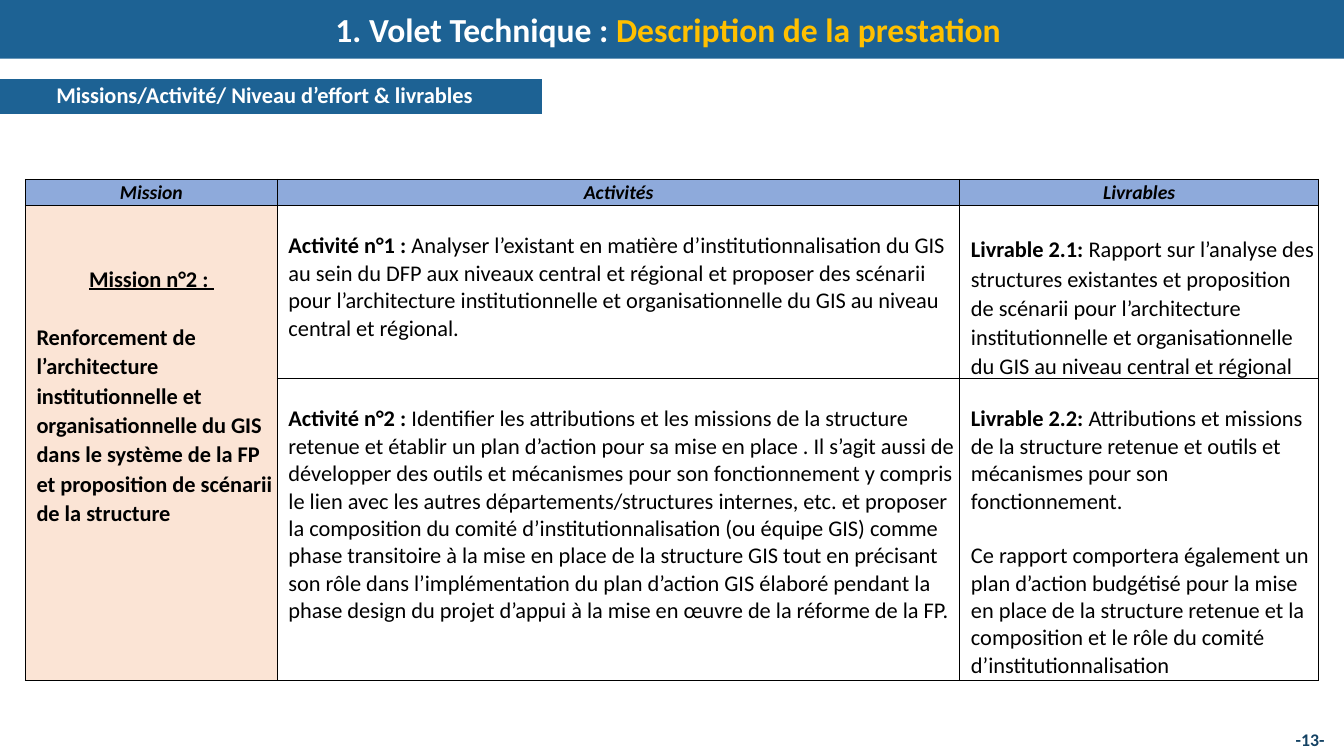
from lxml import etree
from pptx import Presentation
from pptx.dml.color import RGBColor
from pptx.enum.shapes import MSO_SHAPE
from pptx.enum.text import MSO_ANCHOR, PP_ALIGN
from pptx.oxml.ns import qn
from pptx.util import Cm, Pt

RECTANGLE, PARALLELOGRAM = MSO_SHAPE.RECTANGLE, MSO_SHAPE.PARALLELOGRAM
LEFT, CENTER, RIGHT = PP_ALIGN.LEFT, PP_ALIGN.CENTER, PP_ALIGN.RIGHT
MIDDLE = MSO_ANCHOR.MIDDLE

BLUE = RGBColor(0x1D, 0x62, 0x94)
NAVY = RGBColor(0x13, 0x41, 0x63)
GOLD = RGBColor(0xFF, 0xC0, 0x00)
PERIWINKLE = RGBColor(0x8E, 0xAA, 0xDB)
PEACH = RGBColor(0xFB, 0xE4, 0xD5)
WHITE = RGBColor(0xFF, 0xFF, 0xFF)
BLACK = RGBColor(0, 0, 0)

FONT = "Calibri"
SLIDE_WIDTH = 33.87
LINE = 0.69  # height in cm of one line of body text
WIDE = 1.07  # line spacing of the looser cells
COLUMN_WIDTHS = (6.35, 17.2, 9.04)
ROW_HEIGHTS = (0.65, 4.34, 7.62)
HEADERS = ("Mission", "Activités", "Livrables")

MISSION = (
    "Renforcement de l’architecture institutionnelle et organisationnelle du GIS "
    "dans le système de la FP et proposition de scénarii de la structure"
)
ACTIVITY_1 = (
    "Analyser l’existant en matière d’institutionnalisation du GIS au sein du DFP "
    "aux niveaux central et régional et proposer des scénarii pour l’architecture "
    "institutionnelle et organisationnelle du GIS au niveau central et régional."
)
ACTIVITY_2 = (
    "Identifier les attributions et les missions de la structure retenue et établir "
    "un plan d’action pour sa mise en place . Il s’agit aussi de développer des "
    "outils et mécanismes pour son fonctionnement y compris le lien avec les autres "
    "départements/structures internes, etc. et proposer la composition du comité "
    "d’institutionnalisation (ou équipe GIS) comme phase transitoire à la mise en "
    "place de la structure GIS tout en précisant son rôle dans l’implémentation du "
    "plan d’action GIS élaboré pendant la phase design du projet d’appui à la mise "
    "en œuvre de la réforme de la FP."
)
DELIVERABLE_1 = (
    "Rapport sur l’analyse des structures existantes et proposition de scénarii pour "
    "l’architecture institutionnelle et organisationnelle du GIS au niveau central "
    "et régional"
)
DELIVERABLE_2 = (
    "Attributions et missions de la structure retenue et outils et mécanismes pour "
    "son fonctionnement."
)
DELIVERABLE_2_PLAN = (
    "Ce rapport comportera également un plan d’action budgétisé pour la mise en place "
    "de la structure retenue et la composition et le rôle du comité "
    "d’institutionnalisation"
)


def apply(target, formats):
    for name, value in formats.items():
        setattr(target, name, value)


def add_span(para, text, color=BLACK, size=16, **formats):
    span = para.add_run()
    span.text = text
    span.font.color.rgb = color
    apply(span.font, {"name": FONT, "size": Pt(size), **formats})


def set_indent(para, length):
    para._p.get_or_add_pPr().set("marL", str(Cm(length)))


def set_margins(target, side, top):
    apply(target, {"margin_left": Cm(side), "margin_right": Cm(side),
                   "margin_top": Cm(top), "margin_bottom": Cm(top)})


def add_band(page, shape_type, place, **para_formats):
    """Add a blue banner and return its paragraph."""
    band = page.shapes.add_shape(shape_type, *map(Cm, place))
    band.shadow.inherit = False
    band.fill.solid()
    band.fill.fore_color.rgb = BLUE
    band.line.fill.background()
    if shape_type == PARALLELOGRAM:
        band.adjustments[0] = 0
    frame = band.text_frame
    frame.word_wrap = True
    frame.vertical_anchor = MIDDLE
    set_margins(frame, 0.28, 0.15)
    apply(frame.paragraphs[0], para_formats)
    return frame.paragraphs[0]


def add_page_number(page, text):
    box = page.shapes.add_textbox(Cm(25.58), Cm(18.36), Cm(7.8), Cm(0.53))
    set_margins(box.text_frame, 0, 0)
    box.text_frame.word_wrap = True
    para = box.text_frame.paragraphs[0]
    para.alignment = RIGHT
    add_span(para, text, NAVY, 12.7, bold=True)


def set_borders(cell):
    properties = cell._tc.get_or_add_tcPr()
    for position, side in enumerate(("a:lnL", "a:lnR", "a:lnT", "a:lnB")):
        line = etree.Element(qn(side), w=str(Pt(1)))
        fill = etree.SubElement(line, qn("a:solidFill"))
        etree.SubElement(fill, qn("a:srgbClr"), val=str(BLACK))
        properties.insert(position, line)


def style_cell(cell, color=None):
    set_margins(cell, 0.05, 0)
    if color is None:
        cell.fill.background()
    else:
        cell.fill.solid()
        cell.fill.fore_color.rgb = color
    set_borders(cell)


def add_table(page):
    frame = page.shapes.add_table(
        len(ROW_HEIGHTS), len(COLUMN_WIDTHS), Cm(0.64), Cm(4.52),
        Cm(sum(COLUMN_WIDTHS)), Cm(sum(ROW_HEIGHTS)))
    table = frame.table
    apply(table, {"first_row": False, "horz_banding": False})
    for column, width in zip(table.columns, COLUMN_WIDTHS):
        column.width = Cm(width)
    for row, height in zip(table.rows, ROW_HEIGHTS):
        row.height = Cm(height)
    for row_index in range(len(ROW_HEIGHTS)):
        for column_index in range(len(COLUMN_WIDTHS)):
            color = PERIWINKLE if row_index == 0 else PEACH if column_index == 0 else None
            style_cell(table.cell(row_index, column_index), color)
    table.cell(1, 0).merge(table.cell(2, 0))
    return table


def fill_headers(table):
    for column_index, title in enumerate(HEADERS):
        para = table.cell(0, column_index).text_frame.paragraphs[0]
        apply(para, {"alignment": CENTER, "line_spacing": WIDE})
        add_span(para, title, size=14, bold=True, italic=True)


def fill_mission(cell):
    cell.margin_top = Cm(2 * LINE * WIDE)
    heading = cell.text_frame.paragraphs[0]
    apply(heading, {"alignment": CENTER, "line_spacing": WIDE})
    add_span(heading, "Mission n°2 : ", bold=True, underline=True)
    body = cell.text_frame.add_paragraph()
    apply(body, {"alignment": LEFT, "line_spacing": WIDE, "space_before": Pt(21)})
    set_indent(body, 0.23)
    add_span(body, MISSION, bold=True)


def fill_entry(cell, label, text, spacing=1.0, extra=None):
    """Write a bold label and its text one line below the top of the cell."""
    cell.margin_top = Cm(LINE * spacing)
    para = cell.text_frame.paragraphs[0]
    para.line_spacing = spacing
    set_indent(para, 0.23)
    add_span(para, label, bold=True)
    add_span(para, text, bold=False)
    if extra:
        para = cell.text_frame.add_paragraph()
        para.space_before = Pt(19.5)
        set_indent(para, 0.23)
        add_span(para, extra, bold=False)


def main():
    deck = Presentation()
    deck.slide_width, deck.slide_height = Cm(SLIDE_WIDTH), Cm(19.05)
    page = deck.slides.add_slide(deck.slide_layouts[6])

    add_page_number(page, "-13-")

    table = add_table(page)
    fill_headers(table)
    fill_mission(table.cell(1, 0))
    fill_entry(table.cell(1, 1), "Activité n°1 : ", ACTIVITY_1)
    fill_entry(table.cell(1, 2), "Livrable 2.1: ", DELIVERABLE_1, spacing=WIDE)
    fill_entry(table.cell(2, 1), "Activité n°2 : ", ACTIVITY_2)
    fill_entry(table.cell(2, 2), "Livrable 2.2: ", DELIVERABLE_2, extra=DELIVERABLE_2_PLAN)

    subtitle = add_band(page, PARALLELOGRAM, (0, 1.98, 13.67, 0.89),
                        alignment=LEFT, line_spacing=0.9)
    add_span(subtitle, "Missions/Activité/ Niveau d’effort & livrables", WHITE, bold=True)

    title = add_band(page, RECTANGLE, (0, 0, SLIDE_WIDTH, 1.48), alignment=CENTER)
    add_span(title, "1. Volet Technique : ", WHITE, 24, bold=True)
    add_span(title, "Description de la prestation ", GOLD, 24, bold=True)

    deck.save("out.pptx")


if __name__ == "__main__":
    main()
